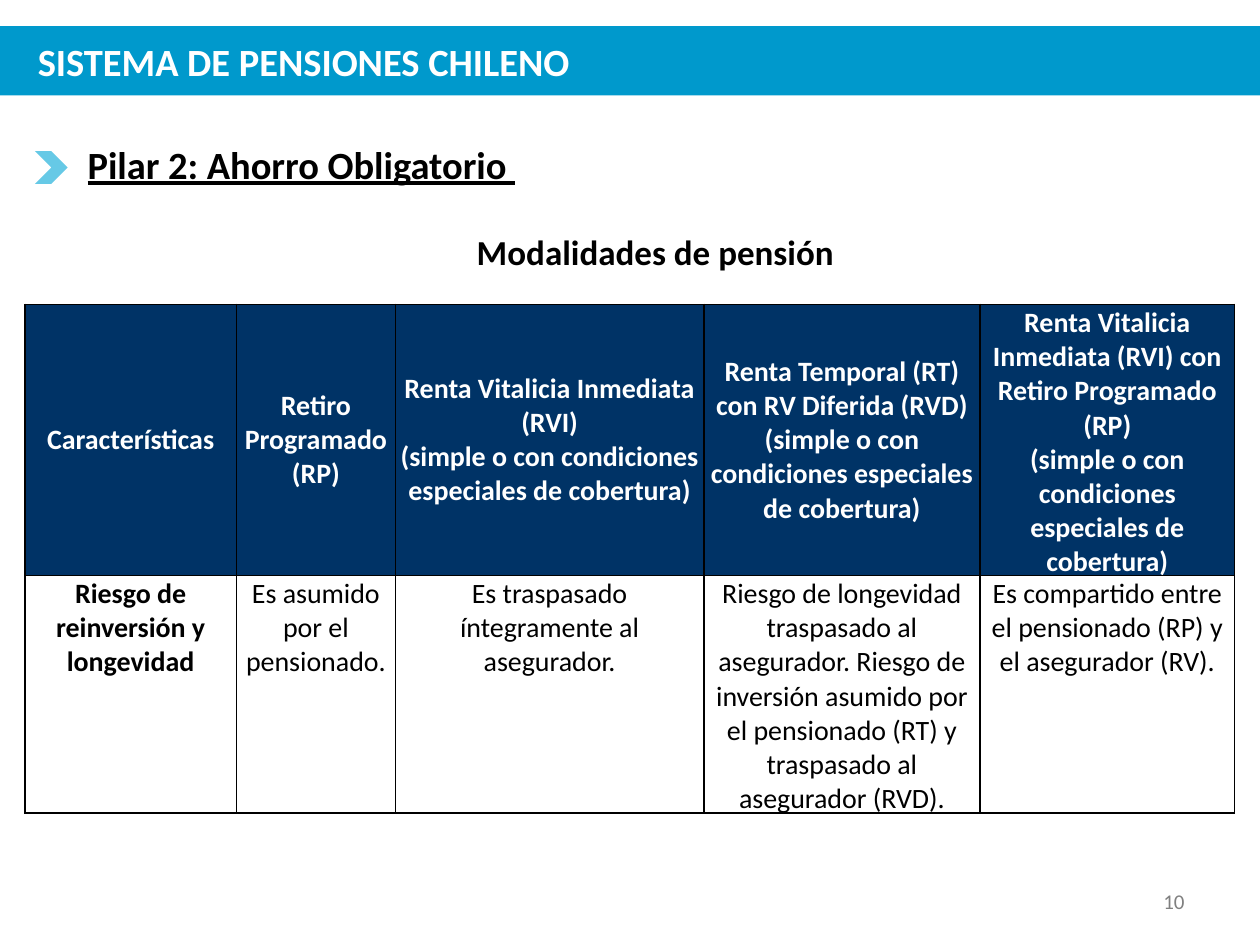
from lxml import etree
from pptx import Presentation
from pptx.dml.color import RGBColor
from pptx.enum.shapes import MSO_SHAPE
from pptx.enum.text import MSO_ANCHOR, MSO_AUTO_SIZE, PP_ALIGN
from pptx.oxml.ns import qn
from pptx.util import Pt

LEFT, CENTER, RIGHT, JUSTIFY = PP_ALIGN.LEFT, PP_ALIGN.CENTER, PP_ALIGN.RIGHT, PP_ALIGN.JUSTIFY
TOP, MIDDLE = MSO_ANCHOR.TOP, MSO_ANCHOR.MIDDLE
NO_FIT, GROW = MSO_AUTO_SIZE.NONE, MSO_AUTO_SIZE.SHAPE_TO_FIT_TEXT

FONT = "Calibri"
COLORS = {
    "band": "0099CC",
    "chevron": "00A6D6",
    "header": "003366",
    "black": "000000",
    "white": "FFFFFF",
    "grey": "808080",
}
COLUMN_WIDTHS = [121, 90.7, 176.4, 157.7, 145.6]
ROW_HEIGHTS = [154, 135.5]
CONDITIONS = "(simple o con condiciones especiales de cobertura)"
# Each cell is a list of paragraphs; "\n" is a line break inside one.
HEADERS = [
    ["Características"],
    ["Retiro Programado", "(RP)"],
    ["Renta Vitalicia Inmediata (RVI)\n" + CONDITIONS],
    ["Renta Temporal (RT) con RV Diferida (RVD)\n" + CONDITIONS],
    ["Renta Vitalicia Inmediata (RVI) con Retiro Programado (RP)\n" + CONDITIONS],
]
RISKS = [
    ["Riesgo de reinversión y longevidad"],
    ["Es asumido por el pensionado."],
    ["Es traspasado íntegramente al asegurador."],
    ["Riesgo de longevidad traspasado al asegurador. Riesgo de inversión asumido "
     "por el pensionado (RT) y traspasado al asegurador (RVD)."],
    ["Es compartido entre el pensionado (RP) y el asegurador (RV)."],
]


def color(name):
    return RGBColor.from_string(COLORS[name])


def write(frame, paragraphs, size, ink, align, bold=False, underline=False):
    for index, text in enumerate(paragraphs):
        para = frame.paragraphs[0] if index == 0 else frame.add_paragraph()
        para.alignment = align
        for number, line in enumerate(text.split("\n")):
            if number:
                para.add_line_break()
            span = para.add_run()
            span.text = line
            span.font.name = FONT
            span.font.size = Pt(size)
            span.font.bold = bold
            span.font.underline = underline
            span.font.color.rgb = color(ink)


def add_filled(page, kind, left, top, width, height, fill):
    shape = page.shapes.add_shape(kind, Pt(left), Pt(top), Pt(width), Pt(height))
    shape.shadow.inherit = False
    shape.fill.solid()
    shape.fill.fore_color.rgb = color(fill)
    shape.line.fill.background()
    return shape


def add_label(page, text, left, top, width, height, size, ink, align,
              anchor=TOP, fit=GROW, **style):
    box = page.shapes.add_textbox(Pt(left), Pt(top), Pt(width), Pt(height))
    frame = box.text_frame
    frame.word_wrap = True
    frame.auto_size = fit
    frame.vertical_anchor = anchor
    write(frame, [text], size, ink, align, **style)


def add_title_band(page, left, top, width, height):
    band = add_filled(page, MSO_SHAPE.RECTANGLE, left, top, width, height, "band")
    title = page.shapes.title
    band.element.addnext(title.element)
    title.left, title.top = Pt(left + 14.4), Pt(top)
    title.width, title.height = Pt(width - 72), Pt(height)
    frame = title.text_frame
    frame.auto_size = NO_FIT
    frame.vertical_anchor = MIDDLE
    write(frame, ["SISTEMA DE PENSIONES CHILENO"], 22, "white", LEFT, bold=True)


def add_pillar_heading(page, left, top, width, height):
    chevron = add_filled(page, MSO_SHAPE.CHEVRON, left, top + 9.4, 18.7, 18.7, "chevron")
    tint = chevron.element.spPr.find(qn("a:solidFill"))[0]
    etree.SubElement(tint, qn("a:alpha"), val="60000")
    add_label(page, "Pilar 2: Ahorro Obligatorio ", left + 23, top, width - 23, height,
              22, "black", JUSTIFY, bold=True, underline=True)


def add_borders(cell):
    properties = cell._tc.get_or_add_tcPr()
    for side in ("lnL", "lnR", "lnT", "lnB"):
        line = etree.SubElement(properties, qn("a:" + side), w=str(Pt(1)))
        fill = etree.SubElement(line, qn("a:solidFill"))
        etree.SubElement(fill, qn("a:srgbClr"), val=COLORS["black"])


def add_modalities_table(page, left, top):
    table = page.shapes.add_table(
        len(ROW_HEIGHTS), len(COLUMN_WIDTHS), Pt(left), Pt(top),
        Pt(sum(COLUMN_WIDTHS)), Pt(sum(ROW_HEIGHTS))).table
    table.horz_banding = False
    for column, width in zip(table.columns, COLUMN_WIDTHS):
        column.width = Pt(width)
    for row, height in zip(table.rows, ROW_HEIGHTS):
        row.height = Pt(height)
    for row, contents in enumerate([HEADERS, RISKS]):
        is_header = row == 0
        for column, paragraphs in enumerate(contents):
            cell = table.cell(row, column)
            cell.margin_left = cell.margin_right = Pt(0.7)
            cell.margin_top = cell.margin_bottom = Pt(0.7)
            cell.vertical_anchor = MIDDLE if is_header else TOP
            add_borders(cell)
            if is_header:
                cell.fill.solid()
                cell.fill.fore_color.rgb = color("header")
            else:
                cell.fill.background()
            write(cell.text_frame, paragraphs, 16, "white" if is_header else "black",
                  CENTER, bold=is_header or column == 0)


def main():
    deck = Presentation()
    deck.slide_width, deck.slide_height = Pt(720), Pt(540)
    page = deck.slides.add_slide(deck.slide_layouts[5])
    add_title_band(page, 0, 15, 720, 39.6)
    add_pillar_heading(page, 20, 77, 652, 34)
    add_label(page, "Modalidades de pensión", 54, 128, 641, 32, 20, "black", CENTER,
              bold=True)
    add_modalities_table(page, 14.2, 174)
    add_label(page, "10", 516, 500.5, 168, 28.8, 12, "grey", RIGHT, anchor=MIDDLE,
              fit=NO_FIT)
    deck.save("out.pptx")


if __name__ == "__main__":
    main()
